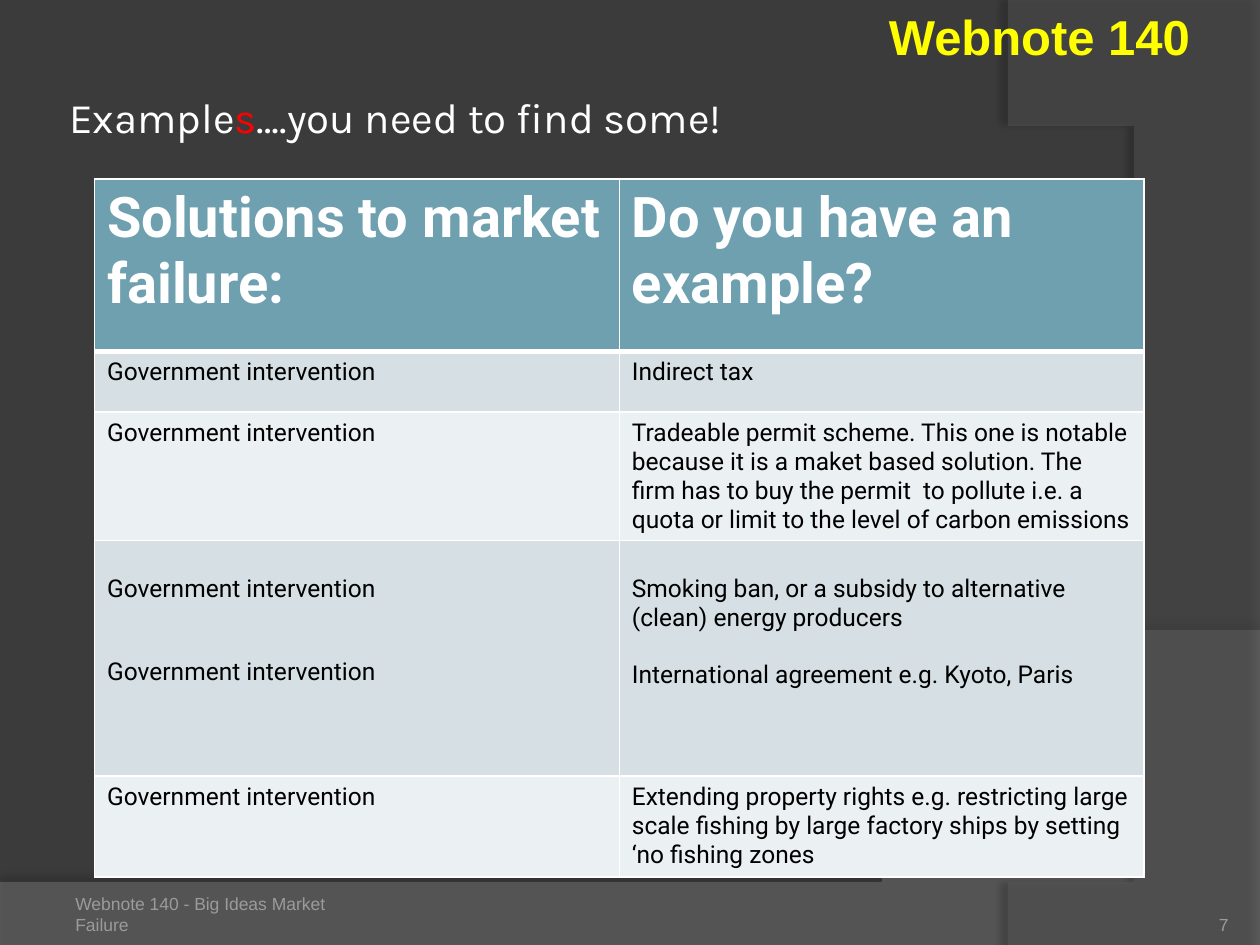
from dataclasses import dataclass

from lxml.etree import SubElement
from pptx import Presentation
from pptx.dml.color import RGBColor
from pptx.enum.text import MSO_ANCHOR, MSO_AUTO_SIZE, PP_ALIGN
from pptx.oxml.ns import qn
from pptx.util import Inches, Pt

COLORS = {
    "background": "3B3B3B", "lower": "7F7F7F", "right": "5E5E5E",
    "white": "FFFFFF", "black": "000000", "red": "FF0000",
    "yellow": "FFFF00", "muted": "9D9B9A",
    "header": "6EA0B0", "band": "D5DFE4", "light": "EBF0F2",
}
Point = tuple[float, float]


@dataclass
class Swoosh:
    start: Point
    before: list[Point]
    curve: list[Point]
    color: str
    opacity: int
    shadow_opacity: int
    shadow_distance: float
    shadow_angle: int


@dataclass
class Label:
    text: str
    box: tuple[float, float, float, float]
    size: int
    color: str
    align: PP_ALIGN
    anchor: MSO_ANCHOR
    margins: tuple[float, float, float, float]
    bold: bool = False


@dataclass
class Row:
    height: float
    fill: str
    solutions: list[str]
    examples: list[str]
    top: float = 0.05
    gaps: tuple[int, int] = (0, 0)


INTERVENTION = "Government intervention"
SWOOSHES = [
    Swoosh((0, 7.05), [(0, 7.5), (10, 7.5), (10, 5.2)],
           [(5.59, 7.29), (3.91, 7.19), (0, 7.05)], "lower", 45, 35, 3.5, 270),
    Swoosh((10, 0.02), [(10, 7.5), (8.21, 7.5)],
           [(9.35, 6.19), (10.18, 3), (8, 0)], "right", 40, 45, 4, 180),
]
LABELS = [
    Label("Webnote 140 - Big Ideas Market Failure", (0.5, 7.02, 2.33, 0.4), 10,
          "muted", PP_ALIGN.LEFT, MSO_ANCHOR.BOTTOM, (0.1, 0.05, 0.1, 0)),
    Label("7", (8.92, 7.02, 0.83, 0.4), 10,
          "muted", PP_ALIGN.RIGHT, MSO_ANCHOR.BOTTOM, (0, 0, 0, 0)),
    Label("Webnote 140", (6.75, 0, 3, 0.57), 28,
          "yellow", PP_ALIGN.CENTER, MSO_ANCHOR.TOP, (0.1, 0.05, 0.1, 0.05), True),
]
ROWS = [
    Row(1.37, "header", ["Solutions to market failure:"], ["Do you have an example?"]),
    Row(0.48, "band", [INTERVENTION], ["Indirect tax"]),
    Row(1.02, "light", [INTERVENTION],
        ["Tradeable permit scheme. This one is notable because it is a maket based "
         "solution. The firm has to buy the permit  to pollute i.e. a quota or limit "
         "to the level of carbon emissions"]),
    Row(1.87, "band", [INTERVENTION, INTERVENTION],
        ["Smoking ban, or a subsidy to alternative (clean) energy producers",
         "International agreement e.g. Kyoto, Paris"], 0.27, (31, 16)),
    Row(0.8, "light", [INTERVENTION],
        ["Extending property rights e.g. restricting large scale fishing by large "
         "factory ships by setting ‘no fishing zones"]),
]


def rgb(name: str) -> RGBColor:
    return RGBColor.from_string(COLORS[name])


def bezier(points: list[Point], steps: int = 60) -> list[Point]:
    def at(t: float) -> Point:
        weights = ((1 - t) ** 3, 3 * t * (1 - t) ** 2, 3 * t * t * (1 - t), t ** 3)
        return (sum(w * p[0] for w, p in zip(weights, points)),
                sum(w * p[1] for w, p in zip(weights, points)))
    return [at(step / steps) for step in range(1, steps + 1)]


def set_alpha(color_element, percent: int) -> None:
    SubElement(color_element, qn("a:alpha"), val=str(percent * 1000))


def draw_swoosh(slide, swoosh: Swoosh) -> None:
    outline = swoosh.before + bezier([swoosh.before[-1], *swoosh.curve])
    builder = slide.shapes.build_freeform(*swoosh.start, scale=Inches(1))
    builder.add_line_segments(outline, close=True)
    shape = builder.convert_to_shape()
    shape.fill.solid()
    shape.fill.fore_color.rgb = rgb(swoosh.color)
    shape.line.fill.background()
    shape.shadow.inherit = False
    properties = shape._element.spPr
    set_alpha(properties.find(qn("a:solidFill"))[0], swoosh.opacity)
    shadow = SubElement(properties.find(qn("a:effectLst")), qn("a:outerShdw"),
                        blurRad=str(Pt(4)), dist=str(Pt(swoosh.shadow_distance)),
                        dir=str(swoosh.shadow_angle * 60000), algn="ctr", rotWithShape="0")
    set_alpha(SubElement(shadow, qn("a:srgbClr"), val=COLORS["black"]),
              swoosh.shadow_opacity)


def set_margins(frame, margins: tuple[float, float, float, float]) -> None:
    (frame.margin_left, frame.margin_top,
     frame.margin_right, frame.margin_bottom) = map(Inches, margins)


def style(paragraph, font: str, size: int, color: str, bold: bool = False) -> None:
    paragraph.font.name = font
    paragraph.font.size = Pt(size)
    paragraph.font.bold = bold
    paragraph.font.color.rgb = rgb(color)


def draw_label(slide, label: Label) -> None:
    frame = slide.shapes.add_textbox(*map(Inches, label.box)).text_frame
    frame.word_wrap = True
    frame.vertical_anchor = label.anchor
    set_margins(frame, label.margins)
    paragraph = frame.paragraphs[0]
    paragraph.text = label.text
    paragraph.alignment = label.align
    style(paragraph, "Arial", label.size, label.color, label.bold)


def draw_title(slide) -> None:
    title = slide.shapes.title
    title._element.getparent().append(title._element)
    title.left, title.top, title.width, title.height = map(Inches, (0.5, 0.3, 8.17, 1.25))
    frame = title.text_frame
    frame.auto_size = MSO_AUTO_SIZE.NONE
    frame.vertical_anchor = MSO_ANCHOR.MIDDLE
    set_margins(frame, (0.05,) * 4)
    heading = frame.paragraphs[0]
    heading.alignment = PP_ALIGN.LEFT
    heading.font.name = "Karla"
    heading.font.size = Pt(24)
    for text, color in (("Example", "white"), ("s", "red"),
                        ("….you need to find some!", "white")):
        run = heading.add_run()
        run.text = text
        run.font.color.rgb = rgb(color)


def set_borders(cell, top: int, bottom: int) -> None:
    properties = cell._tc.get_or_add_tcPr()
    for side, width in (("L", 1), ("R", 1), ("T", top), ("B", bottom)):
        line = SubElement(properties, qn(f"a:ln{side}"), w=str(Pt(width)))
        SubElement(SubElement(line, qn("a:solidFill")), qn("a:srgbClr"), val=COLORS["white"])


def fill_cell(cell, row: Row, texts: list[str], gap: int) -> None:
    cell.fill.solid()
    cell.fill.fore_color.rgb = rgb(row.fill)
    cell.margin_top = Inches(row.top)
    cell.text = "\n".join(texts)
    header = row.fill == "header"
    for index, paragraph in enumerate(cell.text_frame.paragraphs):
        style(paragraph, "Roboto", 32 if header else 14,
              "white" if header else "black", header)
        if index:
            paragraph.space_before = Pt(gap)


def draw_table(slide) -> None:
    height = sum(row.height for row in ROWS)
    table = slide.shapes.add_table(len(ROWS), 2, Inches(0.75), Inches(1.42),
                                   Inches(8.33), Inches(height)).table
    for index, row in enumerate(ROWS):
        table.rows[index].height = Inches(row.height)
        for column, texts in enumerate((row.solutions, row.examples)):
            cell = table.cell(index, column)
            set_borders(cell, 3 if index == 1 else 1, 3 if index == 0 else 1)
            fill_cell(cell, row, texts, row.gaps[column])


def main() -> None:
    deck = Presentation()
    deck.slide_width, deck.slide_height = Inches(10), Inches(7.5)
    slide = deck.slides.add_slide(deck.slide_layouts[5])
    slide.background.fill.solid()
    slide.background.fill.fore_color.rgb = rgb("background")
    for swoosh in SWOOSHES:
        draw_swoosh(slide, swoosh)
    draw_title(slide)
    draw_table(slide)
    for label in LABELS:
        draw_label(slide, label)
    deck.save("out.pptx")


if __name__ == "__main__":
    main()
